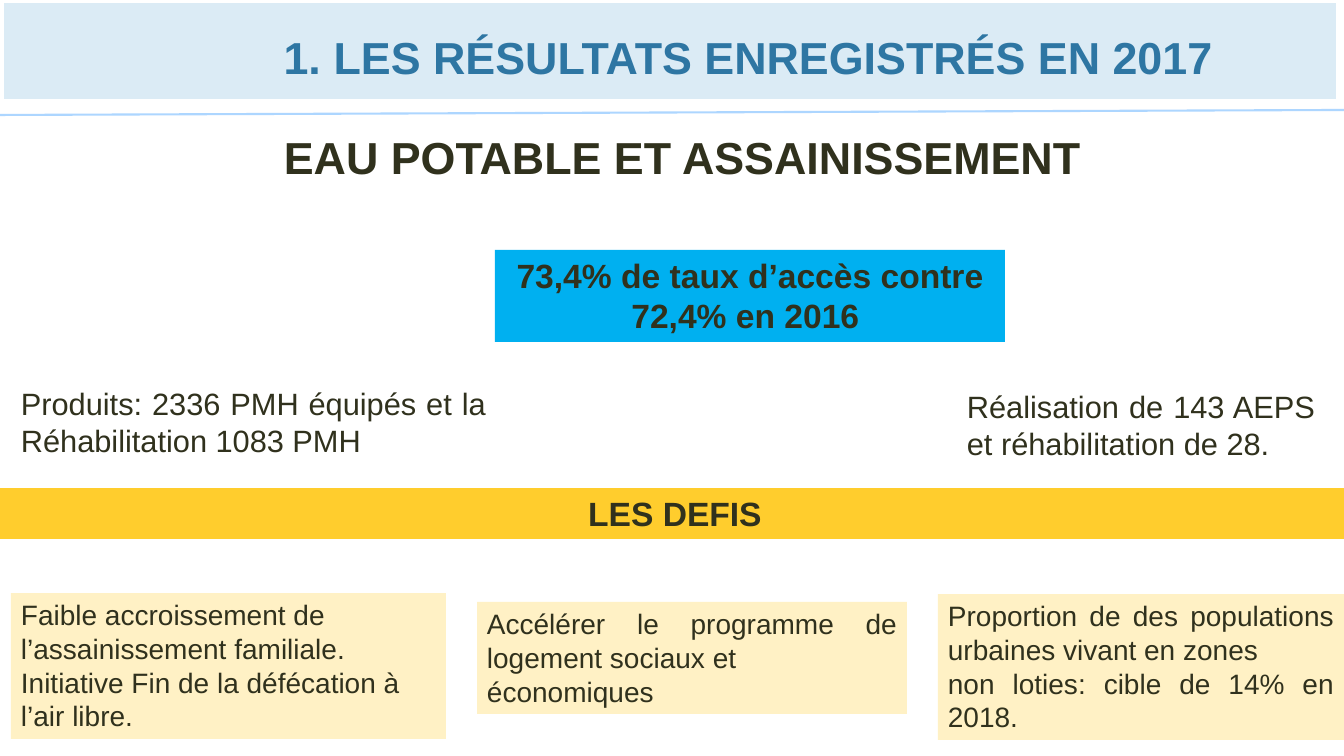
"""Builds the slide on drinking water and sanitation results for 2017."""
from lxml.etree import SubElement
from pptx import Presentation
from pptx.dml.color import RGBColor
from pptx.enum.shapes import MSO_CONNECTOR, MSO_SHAPE
from pptx.enum.text import MSO_ANCHOR, MSO_AUTO_SIZE, PP_ALIGN
from pptx.oxml.ns import qn
from pptx.util import Emu, Pt

EMU_PER_PX = 914400 / 100.8
COLORS = {
    "ink": "30311D",
    "title": "2E76A3",
    "header": "DBEBF5",
    "header_edge": "FFFFFF",
    "rule": "ADD6FF",
    "rate": "00B0F0",
    "challenge": "FFF1C5",
    "band": "FFCD2D",
}


def px(length):
    return Emu(round(length * EMU_PER_PX))


def color(name):
    return RGBColor.from_string(COLORS[name])


def write(frame, text, size, align, bold=False, ink="ink"):
    frame.text = text
    for paragraph in frame.paragraphs:
        paragraph.alignment = align
        for run in paragraph.runs:
            run.font.name = "Arial"
            run.font.size = Pt(size)
            run.font.bold = bold
            run.font.color.rgb = color(ink)


def add_panel(slide, box, fill):
    panel = slide.shapes.add_shape(MSO_SHAPE.RECTANGLE, *map(px, box))
    panel.shadow.inherit = False
    panel.fill.solid()
    panel.fill.fore_color.rgb = color(fill)
    panel.line.fill.background()
    return panel


def add_text_panel(slide, box, fill, text, size, align, bold=False):
    frame = add_panel(slide, box, fill).text_frame
    frame.word_wrap = True
    frame.vertical_anchor = MSO_ANCHOR.TOP
    write(frame, text, size, align, bold)


def add_label(slide, box, text, size, align, bold=False, wrap=True):
    frame = slide.shapes.add_textbox(*map(px, box)).text_frame
    frame.word_wrap = wrap
    write(frame, text, size, align, bold)


def add_rule(slide, start, end):
    rule = slide.shapes.add_connector(MSO_CONNECTOR.STRAIGHT, *map(px, start + end))
    rule.line.color.rgb = color("rule")
    rule.line.width = Pt(1.5)
    SubElement(rule._element.spPr, qn("a:effectLst"))


def add_header(slide):
    header = add_panel(slide, (2, 1, 1336, 100), "header")
    header.line.color.rgb = color("header_edge")
    header.line.width = Pt(2.25)
    add_rule(slide, (0, 115), (1344, 110))


def set_numbered_title(slide, box, text):
    title = slide.shapes.title
    title.left, title.top, title.width, title.height = map(px, box)
    frame = title.text_frame
    frame.auto_size = MSO_AUTO_SIZE.NONE
    frame.word_wrap = True
    frame.vertical_anchor = MSO_ANCHOR.MIDDLE
    write(frame, text, 32, PP_ALIGN.CENTER, True, "title")
    properties = frame.paragraphs[0]._p.get_or_add_pPr()
    indent = px(50)
    properties.set("marL", str(indent))
    properties.set("indent", str(-indent))
    SubElement(properties, qn("a:buFont"), typeface="Arial")
    SubElement(properties, qn("a:buAutoNum"), type="arabicPeriod")


def main():
    presentation = Presentation()
    presentation.slide_width, presentation.slide_height = px(1344), px(756)
    slide = presentation.slides.add_slide(presentation.slide_layouts[5])

    add_header(slide)
    add_label(slide, (270, 125, 825, 65), "EAU POTABLE ET ASSAINISSEMENT",
              32, PP_ALIGN.CENTER, True, False)
    add_text_panel(slide, (495, 250, 510, 92), "rate",
                   "73,4% de taux d’accès contre 72,4% en 2016 ",
                   24, PP_ALIGN.CENTER, True)

    outputs = [
        ((11, 380, 485, 85), "Produits: 2336 PMH équipés et la Réhabilitation 1083 PMH"),
        ((957, 383, 368, 85), "Réalisation de 143 AEPS et réhabilitation de 28. "),
    ]
    for box, text in outputs:
        add_label(slide, box, text, 22, PP_ALIGN.JUSTIFY)

    challenges = [
        ((11, 593, 435, 146), PP_ALIGN.LEFT,
         "Faible accroissement de l’assainissement familiale.\n"
         "Initiative Fin de la défécation à l’air libre."),
        ((477, 602, 430, 112), PP_ALIGN.JUSTIFY,
         "Accélérer le programme de logement sociaux et \néconomiques"),
        ((938, 594, 406, 146), PP_ALIGN.JUSTIFY,
         "Proportion de des populations urbaines vivant en zones \n"
         "non loties: cible de 14% en 2018."),
    ]
    for box, align, text in challenges:
        add_text_panel(slide, box, "challenge", text, 20, align)

    add_text_panel(slide, (0, 488, 1350, 51), "band", "LES DEFIS",
                   24, PP_ALIGN.CENTER, True)
    set_numbered_title(slide, (256, 31, 985, 52), "LES RÉSULTATS ENREGISTRÉS EN 2017")
    slide.shapes._spTree.append(slide.shapes.title._element)

    presentation.save("out.pptx")


if __name__ == "__main__":
    main()
